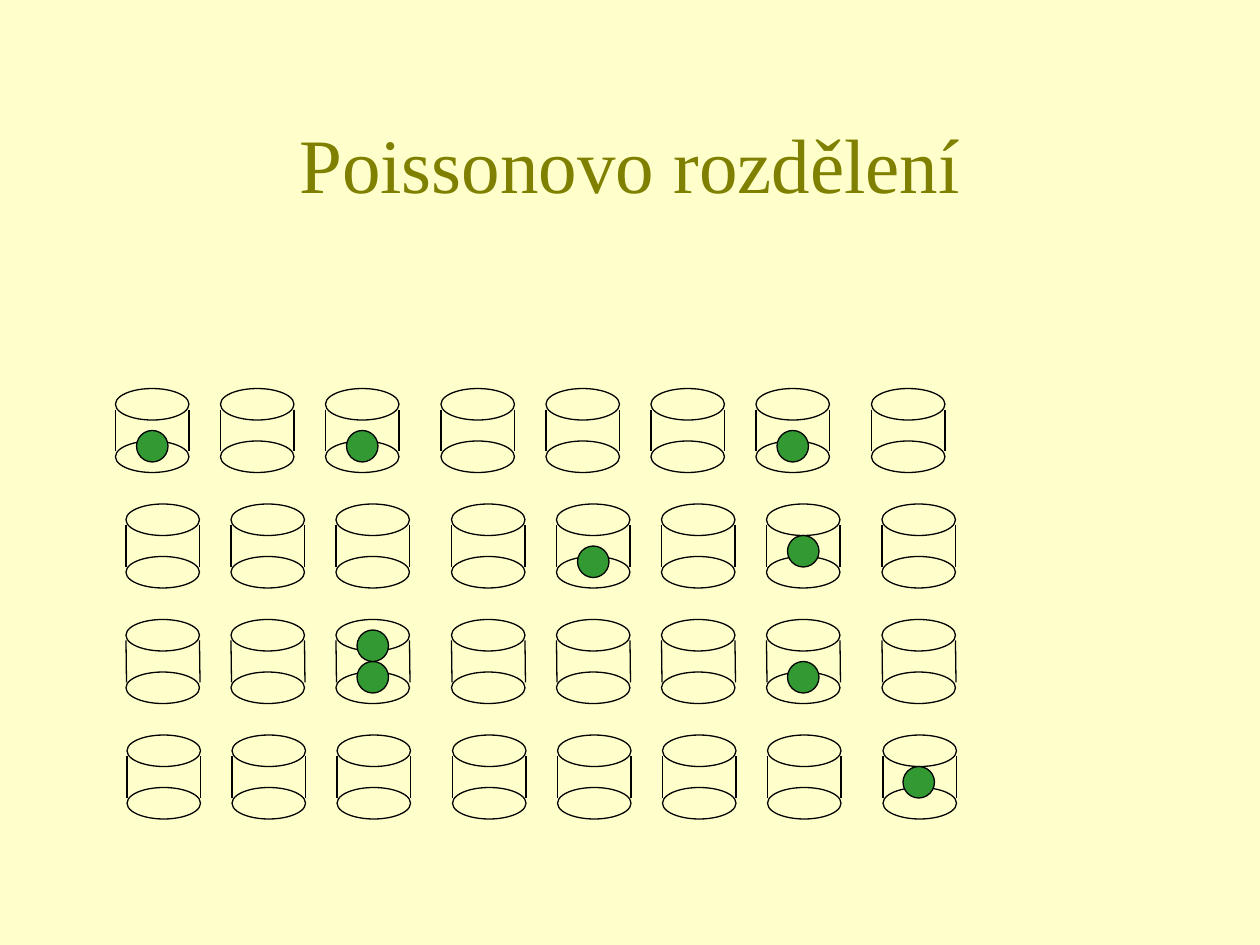
"""Build the Poisson distribution slide: a grid of cylinders with a few balls in them."""
import pptx
import pptx.dml.color
import pptx.enum.shapes
import pptx.enum.text
import pptx.oxml.ns
import pptx.util
from lxml import etree

PX = 914400 // 240
COLORS = {"background": "FFFFCC", "title": "808000", "outline": "000000", "ball": "339933"}
COLUMN_OFFSETS = [0, 200, 400, 620, 820, 1020, 1220, 1440]
ROW_LEFTS = [220, 240, 240, 242]
ROW_DRIFTS = [0, 0, 1, 0]
FIRST_TOP, ROW_PITCH = 740, 220
RIM_WIDTH, RIM_HEIGHT, BASE_DROP = 140, 60, 100
WALL_START, WALL_END = 40, 100
BALL_SIZE = 60
BALLS = [
    (1, 4, 40, 80), (0, 0, 40, 80), (2, 6, 40, 80), (2, 2, 40, 80), (0, 2, 40, 80),
    (2, 2, 40, 20), (3, 7, 38, 60), (1, 6, 40, 60), (0, 6, 40, 80),
]


def rgb(name):
    return pptx.dml.color.RGBColor.from_string(COLORS[name])


def write_text(box, text, font="Times New Roman", size=44, color="title"):
    frame = box.text_frame
    frame.word_wrap = True
    frame.vertical_anchor = pptx.enum.text.MSO_ANCHOR.MIDDLE
    para = frame.paragraphs[0]
    para.alignment = pptx.enum.text.PP_ALIGN.CENTER
    span = para.add_run()
    span.text = text
    span.font.name = font
    span.font.size = pptx.util.Pt(size)
    span.font.color.rgb = rgb(color)


deck = pptx.Presentation()
deck.slide_width, deck.slide_height = 2400 * PX, 1800 * PX
page = deck.slides.add_slide(deck.slide_layouts[5])
page.background.fill.solid()
page.background.fill.fore_color.rgb = rgb("background")

title = page.shapes.title
title.left, title.top, title.width, title.height = 180 * PX, 160 * PX, 2040 * PX, 300 * PX
write_text(title, "Poissonovo rozdělení")

ellipses, walls = [], []
for row, (row_left, drift) in enumerate(zip(ROW_LEFTS, ROW_DRIFTS)):
    top = FIRST_TOP + row * ROW_PITCH
    for offset in COLUMN_OFFSETS:
        left = row_left + offset
        for rim_top in (top, top + BASE_DROP):
            rim = page.shapes.add_shape(
                pptx.enum.shapes.MSO_SHAPE.OVAL,
                left * PX, rim_top * PX, RIM_WIDTH * PX, RIM_HEIGHT * PX)
            rim.fill.background()
            ellipses.append(rim)
        for x in (left, left + RIM_WIDTH):
            walls.append(page.shapes.add_connector(
                pptx.enum.shapes.MSO_CONNECTOR.STRAIGHT,
                x * PX, (top + WALL_START) * PX, (x + drift) * PX, (top + WALL_END + 20) * PX))

for row, column, across, down in BALLS:
    left = ROW_LEFTS[row] + COLUMN_OFFSETS[column] + across
    top = FIRST_TOP + row * ROW_PITCH + down
    ball = page.shapes.add_shape(
        pptx.enum.shapes.MSO_SHAPE.OVAL, left * PX, top * PX, BALL_SIZE * PX, BALL_SIZE * PX)
    ball.fill.solid()
    ball.fill.fore_color.rgb = rgb("ball")
    ellipses.append(ball)

for ellipse in ellipses:
    ellipse.shadow.inherit = False
for wall in walls:
    etree.SubElement(wall.line._get_or_add_ln().getparent(), pptx.oxml.ns.qn("a:effectLst"))
for outlined in ellipses + walls:
    outlined.line.color.rgb = rgb("outline")
    outlined.line.width = pptx.util.Pt(0.75)

deck.save("out.pptx")
